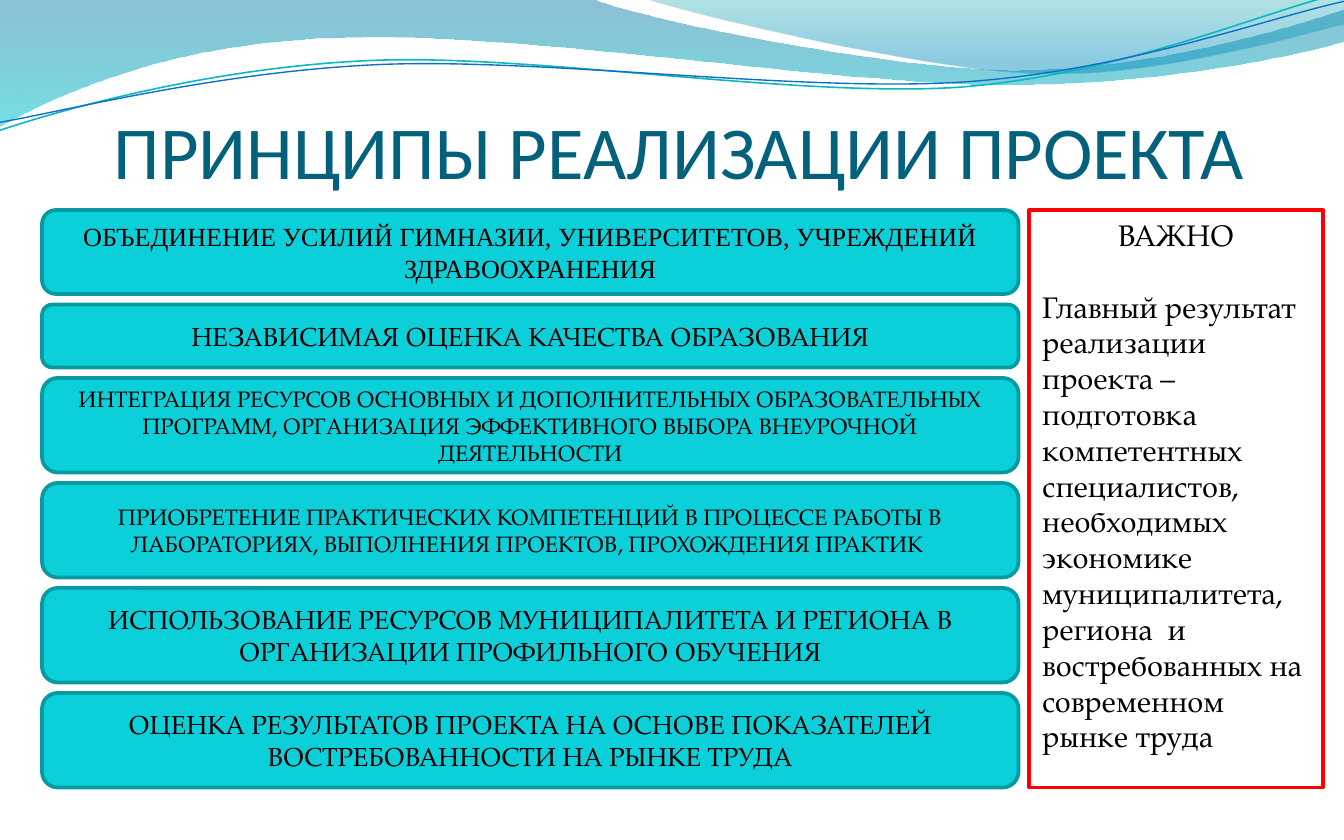
from math import cos, radians, sin
from lxml import etree
from pptx import Presentation
from pptx.dml.color import RGBColor
from pptx.enum.shapes import MSO_SHAPE as SHAPE
from pptx.enum.text import MSO_ANCHOR as ANCHOR, PP_ALIGN as ALIGN
from pptx.oxml.ns import qn
from pptx.util import Inches, Pt

WHITE = RGBColor(0xFF, 0xFF, 0xFF)
BLACK = RGBColor(0x00, 0x00, 0x00)
RED = RGBColor(0xFF, 0x00, 0x00)
TITLE = RGBColor(0x04, 0x61, 0x7B)
CYAN = RGBColor(0x0B, 0xD0, 0xD9)
CYAN_DARK = RGBColor(0x08, 0x9A, 0xA1)
TEAL_LINE = RGBColor(0x0A, 0xB8, 0xBF)
BLUE_LINE = RGBColor(0x0F, 0x6F, 0xC6)
WAVE_BLUE = RGBColor(0x00, 0x74, 0xA1)
WAVE_CYAN = RGBColor(0x00, 0xC6, 0xCF)
CREST_TEAL = RGBColor(0x00, 0xA1, 0xA9)
CREST_BLUE = RGBColor(0x00, 0x8B, 0xBF)

SERIF, TIMES, SANS = "TeX Gyre Pagella", "Times New Roman", "Calibri"
TILT = -2.7  # degrees, thin wave lines

prs = Presentation()
prs.slide_width, prs.slide_height = Inches(10), Inches(6.25)
U = prs.slide_width // 128  # grid unit
s = prs.slides.add_slide(prs.slide_layouts[6])


def add_curve(box, start, segments, close, tilt=0):
    """Outline in slide inches: 2 numbers make a line, 6 make a Bezier curve."""
    x, y, w, h = box
    fb = s.shapes.build_freeform(Inches(x), Inches(y))
    fb.add_line_segments([(Inches(x + w), Inches(y + h))], close=close)
    sp = fb.convert_to_shape()
    sp.shadow.inherit = False
    sp.rotation = tilt
    # Swap the diagonal for the real outline, in the untilted box
    path = next(sp.element.iter(qn("a:path")))
    path[:] = []
    c, n = cos(radians(tilt)), sin(radians(tilt))
    for i, seg in enumerate([start] + segments):
        tag = "a:moveTo" if i == 0 else "a:lnTo" if len(seg) == 2 else "a:cubicBezTo"
        step = etree.SubElement(path, qn(tag))
        for px, py in zip(seg[::2], seg[1::2]):
            dx, dy = px - x - w / 2, py - y - h / 2
            etree.SubElement(step, qn("a:pt"), x=str(Inches(w / 2 + dx * c + dy * n)),
                             y=str(Inches(h / 2 - dx * n + dy * c)))
    if close:
        etree.SubElement(path, qn("a:close"))
    return sp


def add_text(p, text, size, font, color, align):
    p.alignment = align
    r = p.add_run()
    r.text = text
    r.font.size, r.font.name, r.font.color.rgb = Pt(size), font, color


# Filled waves: box, outline and gradient stops (position, colour, opacity in %)
waves = [
    ((-0.01, -0.01, 10.02, 0.95), (0, 0),
     [(4.4, -0.01), (4.76, 0.14, 6.64, 0.52, 7.58, 0.52),
      (8.53, 0.52, 9.58, 0.21, 10, 0.07), (10.01, 0.3),
      (9.83, 0.37, 8.7, 0.63, 7.46, 0.63), (6.22, 0.63, 3.82, 0.23, 2.57, 0.28),
      (1.29, 0.3, 0.46, 0.69, -0.01, 0.94), (0, 0)],
     [(0, WAVE_BLUE, 45), (1, WAVE_CYAN, 55)]),
    ((4.79, -0.01, 5.21, 0.58), (4.79, -0.01),
     [(5.09, 0.09, 6.82, 0.51, 7.69, 0.54), (8.56, 0.58, 9.61, 0.27, 10, 0.18),
      (10, 0), (4.79, -0.01)],
     [(0, CREST_TEAL, 30), (0.8, CREST_BLUE, 45)]),
]
for box, start, segments, stops in waves:
    sp = add_curve(box, start, segments, True)
    sp.line.fill.background()
    sp.fill.gradient()
    sp.fill.gradient_angle = 270
    for stop, (pos, color, opacity) in zip(sp.fill.gradient_stops, stops):
        stop.position, stop.color.rgb = pos, color
    for clr, (_, _, opacity) in zip(sp.element.spPr.iter(qn("a:srgbClr")), stops):
        etree.SubElement(clr, qn("a:alpha"), val=str(opacity * 1000))

# Thin wave lines
wave_lines = [
    ((-0.02, 0.18, 10.02, 0.59), (0, 0.97),
     [(0.48, 0.81, 1.58, 0.5, 2.77, 0.45), (3.95, 0.4, 5.92, 0.73, 7.13, 0.65),
      (8.33, 0.56, 9.39, 0.09, 9.98, -0.05)], TEAL_LINE, 0.85),
    ((-0.02, 0.25, 10.03, 0.48), (0, 0.91),
     [(0.47, 0.83, 1.64, 0.53, 2.83, 0.48), (4.03, 0.43, 5.97, 0.69, 7.17, 0.61),
      (8.36, 0.53, 9.41, 0.14, 10, 0.01)], BLUE_LINE, 0.75),
]
for box, start, segments, color, width in wave_lines:
    sp = add_curve(box, start, segments, False, TILT)
    sp.fill.background()
    sp.line.color.rgb, sp.line.width = color, Pt(width)

# Title
tf = s.shapes.add_textbox(Inches(0.55), Inches(0.7), Inches(9), Inches(0.75)).text_frame
tf.word_wrap, tf.vertical_anchor = True, ANCHOR.BOTTOM
tf.margin_left = tf.margin_right = tf.margin_bottom = 0
add_text(tf.paragraphs[0], "ПРИНЦИПЫ РЕАЛИЗАЦИИ ПРОЕКТА", 40, SANS, TITLE, ALIGN.CENTER)

# Side panel
sp = s.shapes.add_shape(SHAPE.RECTANGLE, 98 * U, 20 * U, 28 * U, 55 * U)
sp.shadow.inherit = False
sp.fill.solid()
sp.fill.fore_color.rgb = WHITE
sp.line.color.rgb, sp.line.width = RED, Pt(2)
tf = sp.text_frame
tf.word_wrap, tf.vertical_anchor = True, ANCHOR.TOP
add_text(tf.paragraphs[0], "ВАЖНО", 16, SERIF, BLACK, ALIGN.CENTER)
p = tf.add_paragraph()
p.space_before = Pt(19.2)
add_text(p, "Главный результат реализации проекта –подготовка компетентных "
            "специалистов, необходимых экономике муниципалитета, региона  и "
            "востребованных на современном рынке труда", 16, SERIF, BLACK, ALIGN.LEFT)

# Principles: rows in grid units, font size, font, text
principles = [
    (8, 14, TIMES, "ОБЪЕДИНЕНИЕ УСИЛИЙ ГИМНАЗИИ, УНИВЕРСИТЕТОВ, УЧРЕЖДЕНИЙ "
                   "ЗДРАВООХРАНЕНИЯ"),
    (6, 14, SERIF, "НЕЗАВИСИМАЯ ОЦЕНКА КАЧЕСТВА ОБРАЗОВАНИЯ"),
    (9, 12, SERIF, "ИНТЕГРАЦИЯ РЕСУРСОВ ОСНОВНЫХ И ДОПОЛНИТЕЛЬНЫХ ОБРАЗОВАТЕЛЬНЫХ "
                   "ПРОГРАММ, ОРГАНИЗАЦИЯ ЭФФЕКТИВНОГО ВЫБОРА ВНЕУРОЧНОЙ ДЕЯТЕЛЬНОСТИ"),
    (9, 12, SERIF, "ПРИОБРЕТЕНИЕ ПРАКТИЧЕСКИХ КОМПЕТЕНЦИЙ В ПРОЦЕССЕ РАБОТЫ В "
                   "ЛАБОРАТОРИЯХ, ВЫПОЛНЕНИЯ ПРОЕКТОВ, ПРОХОЖДЕНИЯ ПРАКТИК "),
    (9, 14, SERIF, "ИСПОЛЬЗОВАНИЕ РЕСУРСОВ МУНИЦИПАЛИТЕТА И РЕГИОНА В "
                   "ОРГАНИЗАЦИИ ПРОФИЛЬНОГО ОБУЧЕНИЯ"),
    (9, 14, SERIF, "ОЦЕНКА РЕЗУЛЬТАТОВ ПРОЕКТА НА ОСНОВЕ ПОКАЗАТЕЛЕЙ "
                   "ВОСТРЕБОВАННОСТИ НА РЫНКЕ ТРУДА"),
]
row = 20
for rows, size, font, text in principles:
    sp = s.shapes.add_shape(SHAPE.ROUNDED_RECTANGLE, 4 * U, row * U, 93 * U, rows * U)
    sp.shadow.inherit = False
    sp.fill.solid()
    sp.fill.fore_color.rgb = CYAN
    sp.line.color.rgb, sp.line.width = CYAN_DARK, Pt(2)
    tf = sp.text_frame
    tf.word_wrap, tf.vertical_anchor = True, ANCHOR.MIDDLE
    add_text(tf.paragraphs[0], text, size, font, BLACK, ALIGN.CENTER)
    row += rows + 1

prs.save("out.pptx")
